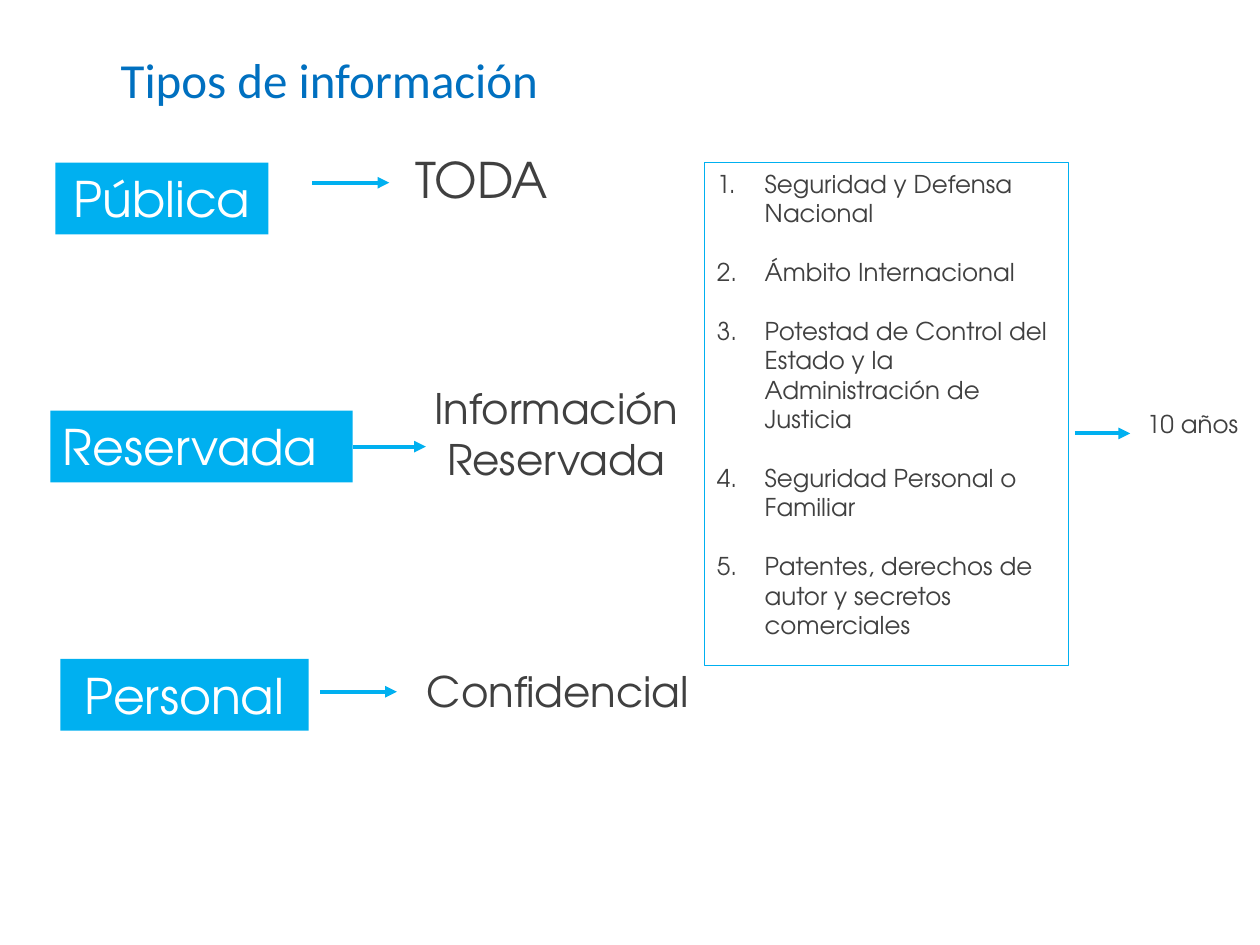
from dataclasses import dataclass

from lxml import etree
from pptx import Presentation
from pptx.dml.color import RGBColor
from pptx.enum import shapes, text
from pptx.oxml import ns
from pptx.util import Inches, Pt

COLORS = {"cyan": "00B0F0", "blue": "0070C0", "grey": "404040", "white": "FFFFFF"}
BODY_FONT = "TeX Gyre Adventor"
LEFT, CENTER = text.PP_ALIGN.LEFT, text.PP_ALIGN.CENTER


@dataclass
class Label:
    wording: str
    left: float
    top: float
    width: float
    height: float
    size: float
    color: str = "grey"
    align: text.PP_ALIGN = CENTER
    font: str = BODY_FONT


@dataclass
class Arrow:
    start: float
    end: float
    y: float


TITLE = Label("Tipos de información", 0.86, 0.34, 5, 0.57, 28, "blue", LEFT, "Calibri")
PUBLIC = Label("Pública", 0.44, 1.29, 1.69, 0.57, 28, "white")
RESERVED = Label("Reservada", 0.4, 3.26, 2.4, 0.57, 28, "white", LEFT)
PERSONAL = Label("Personal", 0.48, 5.23, 1.97, 0.57, 28, "white")
MEANINGS = [
    Label("TODA", 3.15, 1.14, 1.35, 0.57, 28),
    Label("Información Reservada", 2.87, 2.99, 3.09, 0.91, 24),
    Label("Confidencial", 3.29, 5.23, 2.31, 0.51, 24, align=LEFT),
    Label("10 años", 8.93, 3.2, 1.07, 0.35, 14),
]
PUBLIC_ARROW = Arrow(2.48, 3.09, 1.45)
RESERVED_ARROW = Arrow(2.8, 3.38, RESERVED.top + RESERVED.height / 2)
PERSONAL_ARROW = Arrow(2.54, 3.15, 5.49)
TERM_ARROW = Arrow(8.53, 8.97, 3.44)
RESERVED_GROUNDS = [
    "Seguridad y Defensa Nacional",
    "Ámbito Internacional",
    "Potestad de Control del Estado y la Administración de Justicia",
    "Seguridad Personal o Familiar",
    "Patentes, derechos de autor y secretos comerciales",
]


def rgb(name: str) -> RGBColor:
    return RGBColor.from_string(COLORS[name])


def style(paragraph, size: float, color: str, align=LEFT, font: str = BODY_FONT) -> None:
    paragraph.alignment = align
    paragraph.font.size = Pt(size)
    paragraph.font.name = font
    paragraph.font.color.rgb = rgb(color)


def write(shape, label: Label) -> None:
    frame = shape.text_frame
    frame.word_wrap = True
    frame.vertical_anchor = text.MSO_ANCHOR.TOP
    frame.text = label.wording
    style(frame.paragraphs[0], label.size, label.color, label.align, label.font)


def add_label(slide, label: Label) -> None:
    box = slide.shapes.add_textbox(
        Inches(label.left), Inches(label.top), Inches(label.width), Inches(label.height))
    write(box, label)


def add_rectangle(slide, left: float, top: float, width: float, height: float):
    rectangle = slide.shapes.add_shape(
        shapes.MSO_SHAPE.RECTANGLE, Inches(left), Inches(top), Inches(width), Inches(height))
    rectangle.shadow.inherit = False
    return rectangle


def add_category(slide, label: Label):
    category = add_rectangle(slide, label.left, label.top, label.width, label.height)
    category.fill.solid()
    category.fill.fore_color.rgb = rgb("cyan")
    category.line.fill.background()
    write(category, label)
    return category


def add_arrow(slide, arrow: Arrow):
    connector = slide.shapes.add_connector(
        shapes.MSO_CONNECTOR.STRAIGHT,
        Inches(arrow.start), Inches(arrow.y), Inches(arrow.end), Inches(arrow.y))
    connector.line.color.rgb = rgb("cyan")
    connector.line.width = Pt(2.25)
    etree.SubElement(connector.line._get_or_add_ln(), ns.qn("a:tailEnd"), type="triangle")
    etree.SubElement(connector._element.spPr, ns.qn("a:effectLst"))
    return connector


def add_grounds(slide, grounds: list[str]) -> None:
    panel = add_rectangle(slide, 5.59, 1.29, 2.89, 3.99)
    panel.fill.background()
    panel.line.color.rgb = rgb("cyan")
    panel.line.width = Pt(0.75)
    frame = panel.text_frame
    frame.word_wrap = True
    frame.vertical_anchor = text.MSO_ANCHOR.TOP
    for index, ground in enumerate(grounds):
        paragraph = frame.add_paragraph() if index else frame.paragraphs[0]
        paragraph.text = ground
        properties = paragraph._p.get_or_add_pPr()
        properties.set("marL", str(Inches(0.38)))
        properties.set("indent", str(-Inches(0.38)))
        etree.SubElement(properties, ns.qn("a:buFont"), typeface="+mj-lt")
        etree.SubElement(properties, ns.qn("a:buAutoNum"), type="arabicPeriod")
        if index:
            paragraph.space_before = Pt(16.8)
        style(paragraph, 14, "grey")


def main() -> None:
    deck = Presentation()
    deck.slide_width, deck.slide_height = Inches(10), Inches(7.5)
    slide = deck.slides.add_slide(deck.slide_layouts[6])

    # Title
    add_label(slide, TITLE)

    # Kinds of information and what each covers
    add_category(slide, PUBLIC)
    reserved = add_category(slide, RESERVED)
    add_category(slide, PERSONAL)
    for meaning in MEANINGS:
        add_label(slide, meaning)

    # Grounds for reserving information
    add_grounds(slide, RESERVED_GROUNDS)

    # Arrows
    for arrow in (PUBLIC_ARROW, PERSONAL_ARROW, TERM_ARROW):
        add_arrow(slide, arrow)
    add_arrow(slide, RESERVED_ARROW).begin_connect(reserved, 3)

    deck.save("out.pptx")


if __name__ == "__main__":
    main()
